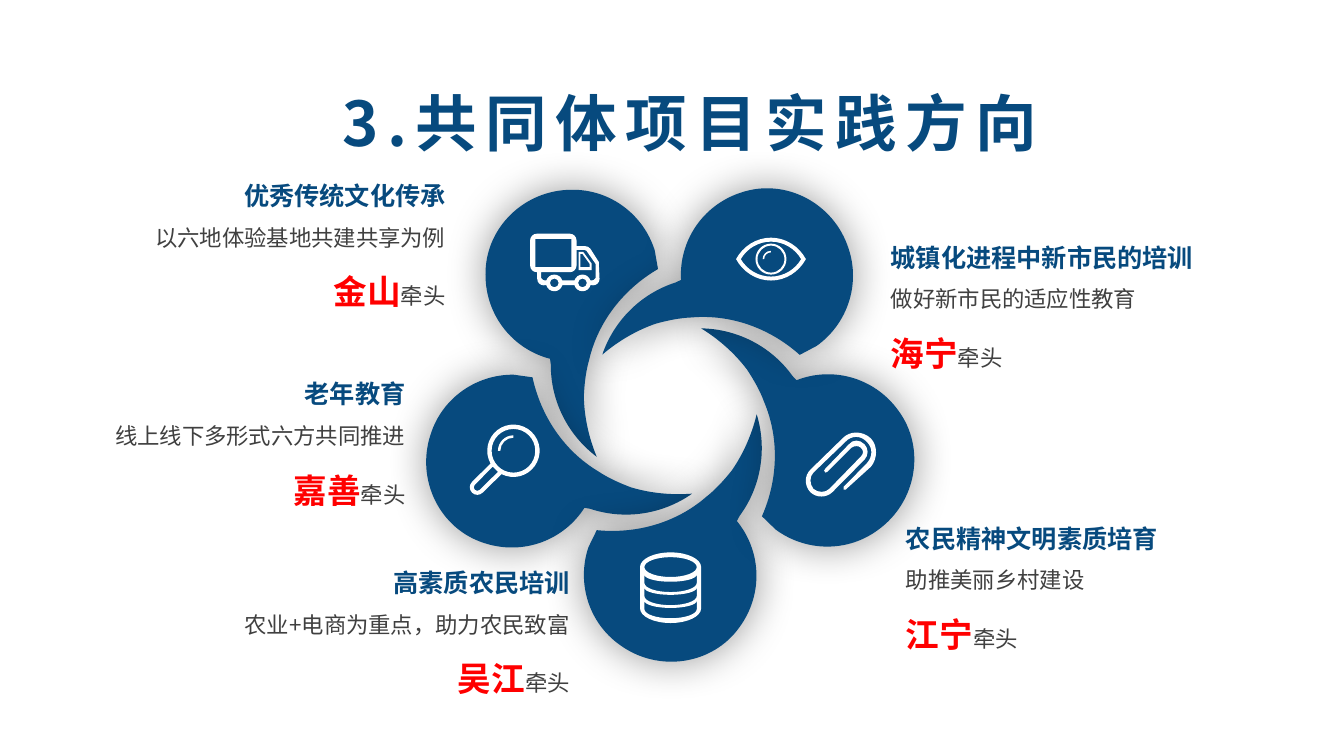
from math import ceil, cos, radians, sin, tan

from lxml import etree
from pptx import Presentation
from pptx.dml.color import RGBColor
from pptx.enum.text import MSO_ANCHOR, MSO_AUTO_SIZE, PP_ALIGN
from pptx.oxml.ns import qn
from pptx.util import Cm, Pt

LEFT, RIGHT, CENTER = PP_ALIGN.LEFT, PP_ALIGN.RIGHT, PP_ALIGN.CENTER
MIDDLE = MSO_ANCHOR.MIDDLE
GROW, FIXED = MSO_AUTO_SIZE.SHAPE_TO_FIT_TEXT, MSO_AUTO_SIZE.NONE
FONT = "Noto Sans CJK SC"
BLUE, WHITE, GRAY, RED = "074A7E", "FFFFFF", "404040", "FF0000"
UNITS_PER_CM = 1000
WHEEL_CENTER = (16.88, 10.32)
PETAL_ANGLES = (144, 72, 0, -72, -144)

TOPICS = [
    (2.64, 4.04, 8.84, 3.99, RIGHT, "优秀传统文化传承", "以六地体验基地共建共享为例", "金山"),
    (1.68, 9.04, 8.79, 3.99, RIGHT, "老年教育", "线上线下多形式六方共同推进", "嘉善"),
    (4.09, 13.79, 10.52, 3.78, RIGHT, "高素质农民培训", "农业+电商为重点，助力农民致富", "吴江"),
    (22.2, 5.59, 8.79, 3.99, LEFT, "城镇化进程中新市民的培训", "做好新市民的适应性教育", "海宁"),
    (22.58, 12.67, 9.17, 3.99, LEFT, "农民精神文明素质培育", "助推美丽乡村建设", "江宁"),
]


def color(hex_string):
    return RGBColor.from_string(hex_string)


def lines(*points):
    return [(point,) for point in points]


def curve(start, *knots):
    return [(start,)] + [knots[i:i + 3] for i in range(0, len(knots), 3)]


def arc(x, y, radius_x, radius_y, start=0, end=360):
    count = ceil(abs(end - start) / 90)
    step = radians(end - start) / count
    pull = 4 / 3 * tan(step / 4)
    knots = [(cos(radians(start)), sin(radians(start)))]
    for i in range(count):
        a = radians(start) + step * i
        b = a + step
        knots += [(cos(a) - pull * sin(a), sin(a) + pull * cos(a)),
                  (cos(b) + pull * sin(b), sin(b) - pull * cos(b)), (cos(b), sin(b))]
    return curve(*[(x + radius_x * u, y + radius_y * v) for u, v in knots])


def circle_arc(x, y, radius, start=0, end=360):
    return arc(x, y, radius, radius, start, end)


def glint(x, y, outer, inner):
    return circle_arc(x, y, outer, 180, 270) + circle_arc(x, y, inner, 270, 180)


def eye_outline(x, y, width, height):
    return curve(*[(x + width * u, y + height * v) for u, v in (
        (-1, 0), (-0.8, -0.6), (-0.42, -1), (0, -1), (0.42, -1), (0.8, -0.6), (1, 0),
        (0.8, 0.6), (0.42, 1), (0, 1), (-0.42, 1), (-0.8, 0.6), (-1, 0))])


def bend_segments(shape, contours):
    line_elements = iter(list(shape._element.iter(qn("a:lnTo"))))
    for contour in contours:
        for segment in contour[1:]:
            elements = [next(line_elements) for _ in segment]
            if len(segment) == 3:
                bezier = etree.Element(qn("a:cubicBezTo"))
                elements[0].addprevious(bezier)
                for element in elements:
                    bezier.append(element[0])
                    element.getparent().remove(element)


def add_outline(slide, fill, *contours):
    scaled = [[(x * UNITS_PER_CM, y * UNITS_PER_CM) for segment in contour for x, y in segment]
              for contour in contours]
    builder = slide.shapes.build_freeform(*scaled[0][0], scale=Cm(1) / UNITS_PER_CM)
    for index, points in enumerate(scaled):
        if index:
            builder.move_to(*points[0])
        builder.add_line_segments(points[1:], close=True)
    shape = builder.convert_to_shape()
    bend_segments(shape, contours)
    shape.fill.solid()
    shape.fill.fore_color.rgb = color(fill)
    shape.line.fill.background()
    shape.shadow.inherit = False
    return shape


def add_glow_shadow(shape):
    effects = shape._element.spPr.find(qn("a:effectLst"))
    shadow = etree.SubElement(effects, qn("a:outerShdw"), blurRad=str(Pt(30)), dist="0",
                              dir="0", algn="ctr", rotWithShape="0")
    black = etree.SubElement(shadow, qn("a:srgbClr"), val="000000")
    etree.SubElement(black, qn("a:alpha"), val="40000")


def add_petals(slide):
    petal = (
        lines((-1.84, 3.04))
        + curve((-2.05, 3.47), (-2.35, 4.36), (-2.05, 5.37), (-1.26, 5.93),
                (-0.29, 6.64), (1.08, 6.44), (1.76, 5.48),
                (2.37, 4.64), (2.3, 3.55), (1.69, 2.81))
        + curve((1.76, 2.68), (2.32, 1.92), (2.45, 0.96), (2.19, 0.12),
                (2.07, 0.62), (1.86, 1.11), (1.56, 1.54),
                (1.36, 1.79), (1.15, 2.02), (0.92, 2.2),
                (0.16, 2.86), (-0.85, 3.14), (-1.84, 3.04)))
    center_x, center_y = WHEEL_CENTER
    for angle in PETAL_ANGLES:
        c, s = cos(radians(angle)), sin(radians(angle))
        contour = [tuple((center_x + x * c - y * s, center_y + x * s + y * c)
                         for x, y in segment) for segment in petal]
        add_glow_shadow(add_outline(slide, BLUE, contour))


def add_paperclip(slide):
    add_outline(slide, WHITE, (
        curve((21.95, 11.05), (21.74, 10.85), (21.41, 10.85), (21.23, 11.05))
        + curve((20.42, 11.84), (20.27, 11.99), (20.27, 12.24), (20.42, 12.4),
                (20.57, 12.55), (20.83, 12.55), (20.98, 12.4))
        + curve((21.79, 11.58), (21.89, 11.48), (21.89, 11.3), (21.79, 11.2),
                (21.67, 11.07), (21.49, 11.07), (21.39, 11.2))
        + lines((20.8, 11.81), (20.77, 11.86), (20.8, 11.91), (20.85, 11.89))
        + curve((21.46, 11.28), (21.54, 11.23), (21.64, 11.23), (21.69, 11.28),
                (21.77, 11.35), (21.77, 11.43), (21.69, 11.51))
        + curve((20.9, 12.32), (20.8, 12.42), (20.62, 12.42), (20.5, 12.32),
                (20.4, 12.19), (20.4, 12.01), (20.5, 11.91))
        + curve((21.31, 11.13), (21.46, 10.97), (21.69, 10.97), (21.84, 11.13),
                (22, 11.28), (22, 11.51), (21.84, 11.68))
        + lines((21.26, 12.27), (21.26, 12.34), (21.31, 12.34))
        + curve((21.95, 11.76), (22.12, 11.56), (22.12, 11.23), (21.95, 11.05))))


def add_database(slide):
    x, top = 16.9, 14.29
    body = arc(x, top, 0.77, 0.37, 180, 360) + arc(x, 15.33, 0.77, 0.37, 0, 180)
    layers = [arc(x, y, 0.66, 0.18, 180, 0) + arc(x, y + 0.21, 0.66, 0.23, 0, 180)
              for y in (14.48 + 0.33 * i for i in range(3))]
    add_outline(slide, WHITE, body, arc(x, top, 0.66, 0.25), *layers)


def add_magnifier(slide):
    x, y = 12.94, 11.36
    rim = circle_arc(x, y, 0.66, 151, 477) + circle_arc(12.03, 12.28, 0.19, 45, 225)
    handle = lines((12.42, 11.76), (12.55, 11.89)) + circle_arc(12.03, 12.28, 0.09, 45, 225)
    slide.shapes.add_group_shape([
        add_outline(slide, WHITE, rim, handle, circle_arc(x, y, 0.55)),
        add_outline(slide, WHITE, glint(x, y, 0.39, 0.33))])


def add_eye(slide):
    x, y = 19.43, 6.53
    slide.shapes.add_group_shape([
        add_outline(slide, WHITE, eye_outline(x, y, 0.88, 0.54), eye_outline(x, y, 0.76, 0.44)),
        add_outline(slide, WHITE, glint(x, y, 0.21, 0.17)),
        add_outline(slide, WHITE, circle_arc(x, y, 0.39), circle_arc(x, y, 0.34))])


def add_truck(slide):
    front, back, axle = 14.68, 13.97, 7.13
    body = (circle_arc(13.53, 6.06, 0.17, 180, 270) + circle_arc(14.36, 6.06, 0.17, 270, 360)
            + lines((14.53, 6.2), (14.73, 6.2), (14.82, 6.22), (14.88, 6.27), (15.09, 6.6))
            + circle_arc(14.95, 7.03, 0.16, 0, 90)
            + circle_arc(front, axle, 0.21, 15, 165) + circle_arc(back, axle, 0.21, 15, 165)
            + circle_arc(13.7, 7.03, 0.16, 90, 180) + lines((13.54, 6.86))
            + circle_arc(13.53, 6.69, 0.17, 90, 180))
    cabin = (lines((15.01, 6.65), (15.01, 7.01), (14.96, 7.06))
             + circle_arc(front, axle, 0.21, -17, -163) + circle_arc(back, axle, 0.21, -17, -163)
             + lines((13.69, 7.06), (13.64, 7.01), (13.64, 6.86))
             + circle_arc(14.36, 6.69, 0.17, 90, 0)
             + lines((14.53, 6.3), (14.73, 6.3), (14.78, 6.32)))
    window = lines((14.58, 6.35), (14.7, 6.35), (14.91, 6.64), (14.91, 6.81), (14.58, 6.81))
    glass = lines((14.63, 6.4), (14.68, 6.4), (14.86, 6.65), (14.86, 6.73), (14.63, 6.73))
    wheels = [circle_arc(x, axle, 0.11) for x in (front, back)]
    cargo = lines((13.49, 6.02), (14.4, 6.02), (14.4, 6.73), (13.49, 6.73))
    slide.shapes.add_group_shape([
        add_outline(slide, WHITE, window, glass),
        add_outline(slide, WHITE, body, cargo, cabin, *wheels)])


def format_font(font, size, hex_string, bold):
    font.size, font.bold, font.name = Pt(size), bold, FONT
    font.color.rgb = color(hex_string)
    etree.SubElement(font._rPr, qn("a:ea"), typeface=FONT)


def add_topic(slide, left, top, width, height, alignment, heading, detail, leader):
    frame = slide.shapes.add_textbox(Cm(left), Cm(top), Cm(width), Cm(height)).text_frame
    frame.word_wrap, frame.auto_size = True, GROW
    rows = [[(heading, 18, BLUE, True)], [(detail, 16, GRAY, False)],
            [(leader, 24, RED, True), ("牵头", 16, GRAY, False)]]
    for index, row in enumerate(rows):
        paragraph = frame.add_paragraph() if index else frame.paragraphs[0]
        paragraph.alignment, paragraph.line_spacing = alignment, 1.5
        for text, *style in row:
            run = paragraph.add_run()
            run.text = text
            format_font(paragraph.font if len(row) == 1 else run.font, *style)


def format_title(title, text):
    title.left, title.top, title.width, title.height = Cm(8.18), Cm(1.9), Cm(18.42), Cm(2.18)
    frame = title.text_frame
    frame.text = text
    frame.vertical_anchor, frame.auto_size = MIDDLE, FIXED
    paragraph = frame.paragraphs[0]
    paragraph.alignment, paragraph.line_spacing = CENTER, 1.1
    format_font(paragraph.font, 44, BLUE, True)
    paragraph.font._rPr.set("spc", "600")


def main():
    presentation = Presentation()
    presentation.slide_width, presentation.slide_height = Cm(33.87), Cm(19.05)
    slide = presentation.slides.add_slide(presentation.slide_layouts[5])
    format_title(slide.shapes.title, "3.共同体项目实践方向")
    add_petals(slide)
    for add_icon in (add_paperclip, add_database, add_magnifier, add_eye, add_truck):
        add_icon(slide)
    for topic in TOPICS:
        add_topic(slide, *topic)
    presentation.save("out.pptx")


if __name__ == "__main__":
    main()
